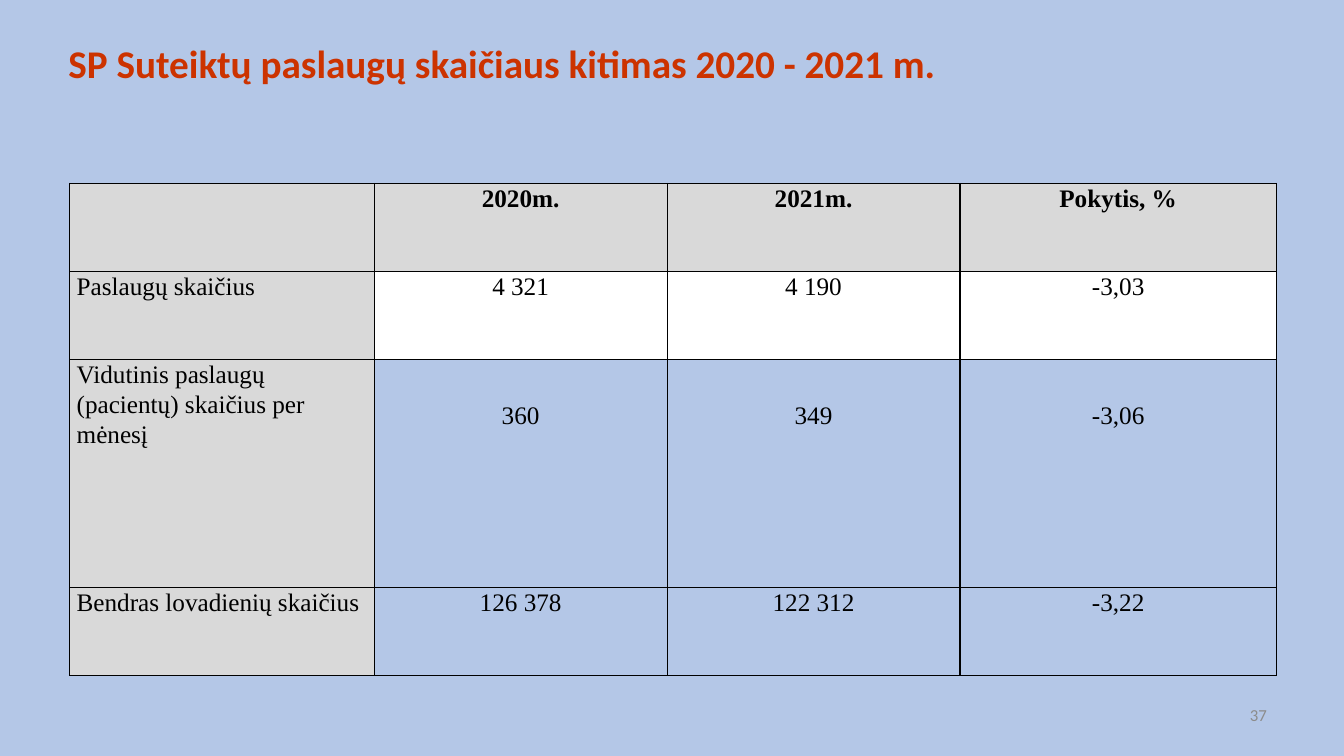
from lxml.etree import SubElement
from pptx import Presentation
from pptx.dml.color import RGBColor
from pptx.enum.text import MSO_ANCHOR, PP_ALIGN
from pptx.oxml.ns import qn
from pptx.util import Pt

TITLE = "SP Suteiktų paslaugų skaičiaus kitimas 2020 - 2021 m."
PAGE_NUMBER = "37"
ROWS = [
    ("", "2020m.", "2021m.", "Pokytis, %"),
    ("Paslaugų skaičius", "4 321", "4 190", "-3,03"),
    ("Vidutinis paslaugų (pacientų) skaičius per mėnesį", "360", "349", "-3,06"),
    ("Bendras lovadienių skaičius", "126 378", "122 312", "-3,22"),
]
COLUMN_WIDTHS = (217.5, 209.25, 209.25, 226)
ROW_HEIGHTS = (62.8, 62.8, 163, 62.8)
TABLE_LEFT, TABLE_TOP = 49.8, 131
AVERAGE_ROW = 2
AVERAGE_DROP = 29.5

THEME = {
    "background": "B4C7E7", "title": "CC3300", "number": "8C8C8C",
    "ink": "000000", "header": "D9D9D9", "count": "FFFFFF",
    "heading_font": "Calibri", "table_font": "Times New Roman",
    "title_size": 28, "number_size": 12, "table_size": 18, "border": 1,
}


def style_paragraph(paragraph, font, size, color, bold=False, align=PP_ALIGN.LEFT):
    paragraph.alignment = align
    targets = [run.font for run in paragraph.runs] or [paragraph.font]
    for target in targets:
        target.name = font
        target.size = Pt(size)
        target.bold = bold
        target.color.rgb = RGBColor.from_string(color)


def add_label(slide, text, box, size, color, bold=False, align=PP_ALIGN.LEFT):
    shape = slide.shapes.add_textbox(*map(Pt, box))
    frame = shape.text_frame
    frame.word_wrap = True
    frame.vertical_anchor = MSO_ANCHOR.MIDDLE
    frame.text = text
    paragraph = frame.paragraphs[0]
    style_paragraph(paragraph, THEME["heading_font"], size, color, bold, align)
    return paragraph


def add_borders(cell):
    properties = cell._tc.get_or_add_tcPr()
    for side in ("a:lnL", "a:lnR", "a:lnT", "a:lnB"):
        line = SubElement(properties, qn(side), w=str(Pt(THEME["border"])))
        fill = SubElement(line, qn("a:solidFill"))
        SubElement(fill, qn("a:srgbClr"), val=THEME["ink"])


def fill_cell(cell, row, column):
    if row == 0 or column == 0:
        color = THEME["header"]
    elif row == 1:
        color = THEME["count"]
    else:
        cell.fill.background()
        return
    cell.fill.solid()
    cell.fill.fore_color.rgb = RGBColor.from_string(color)


def add_services_table(slide):
    frame = slide.shapes.add_table(
        len(ROWS), len(COLUMN_WIDTHS), Pt(TABLE_LEFT), Pt(TABLE_TOP),
        Pt(sum(COLUMN_WIDTHS)), Pt(sum(ROW_HEIGHTS)))
    table = frame.table
    table.first_row = table.horz_banding = False
    for column, width in zip(table.columns, COLUMN_WIDTHS):
        column.width = Pt(width)
    for row, height in zip(table.rows, ROW_HEIGHTS):
        row.height = Pt(height)
    for row, values in enumerate(ROWS):
        for column, value in enumerate(values):
            cell = table.cell(row, column)
            add_borders(cell)
            fill_cell(cell, row, column)
            cell.margin_left = cell.margin_right = Pt(5)
            dropped = row == AVERAGE_ROW and column > 0
            cell.margin_top = Pt(AVERAGE_DROP if dropped else 0)
            cell.margin_bottom = Pt(0)
            cell.text_frame.text = value
            paragraph = cell.text_frame.paragraphs[0]
            paragraph.line_spacing = 1.07
            paragraph.space_after = Pt(8)
            style_paragraph(
                paragraph, THEME["table_font"], THEME["table_size"], THEME["ink"],
                row == 0, PP_ALIGN.CENTER if column else PP_ALIGN.LEFT)


def main():
    presentation = Presentation()
    presentation.slide_width = Pt(960)
    presentation.slide_height = Pt(540)
    slide = presentation.slides.add_slide(presentation.slide_layouts[6])
    slide.background.fill.solid()
    slide.background.fill.fore_color.rgb = RGBColor.from_string(THEME["background"])

    title = add_label(slide, TITLE, (41.8, 18, 723, 57.6),
                      THEME["title_size"], THEME["title"], bold=True)
    title.line_spacing = 0.9
    add_services_table(slide)
    add_label(slide, PAGE_NUMBER, (688, 492, 224, 37.4),
              THEME["number_size"], THEME["number"], align=PP_ALIGN.RIGHT)
    presentation.save("out.pptx")


if __name__ == "__main__":
    main()
